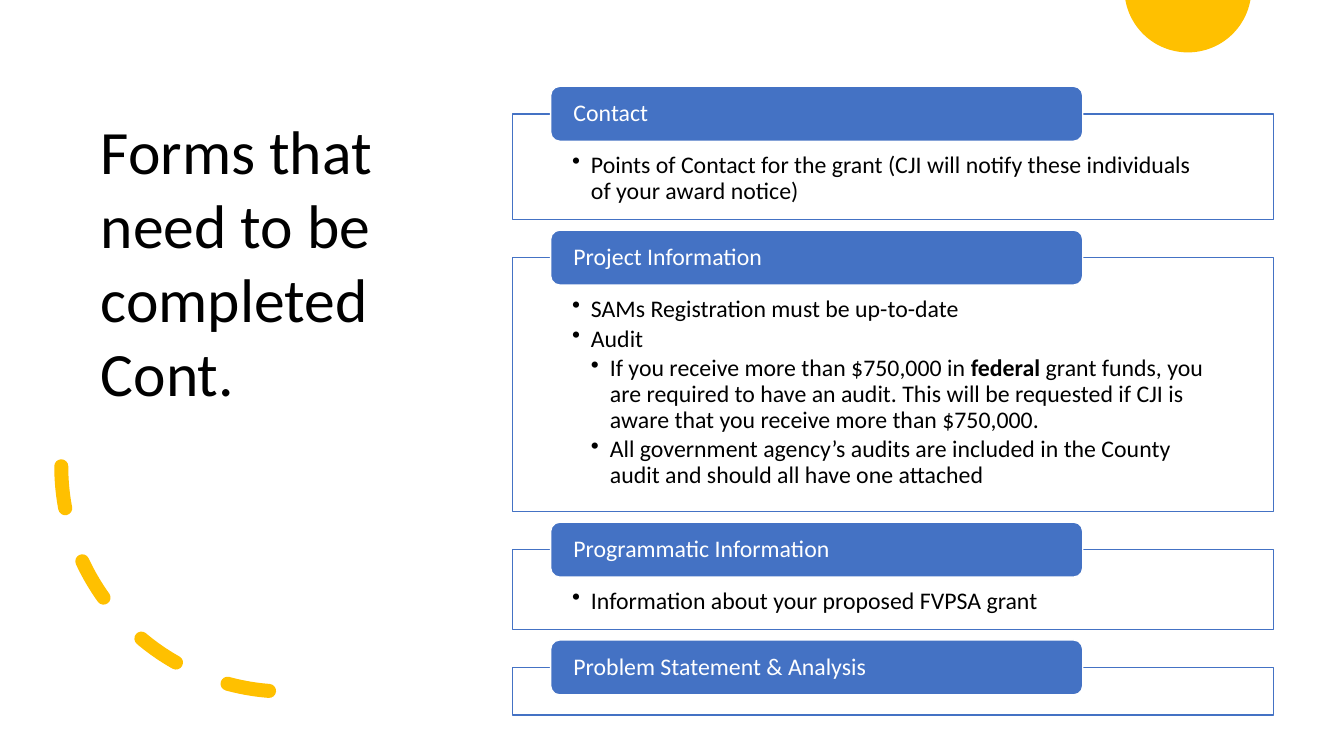
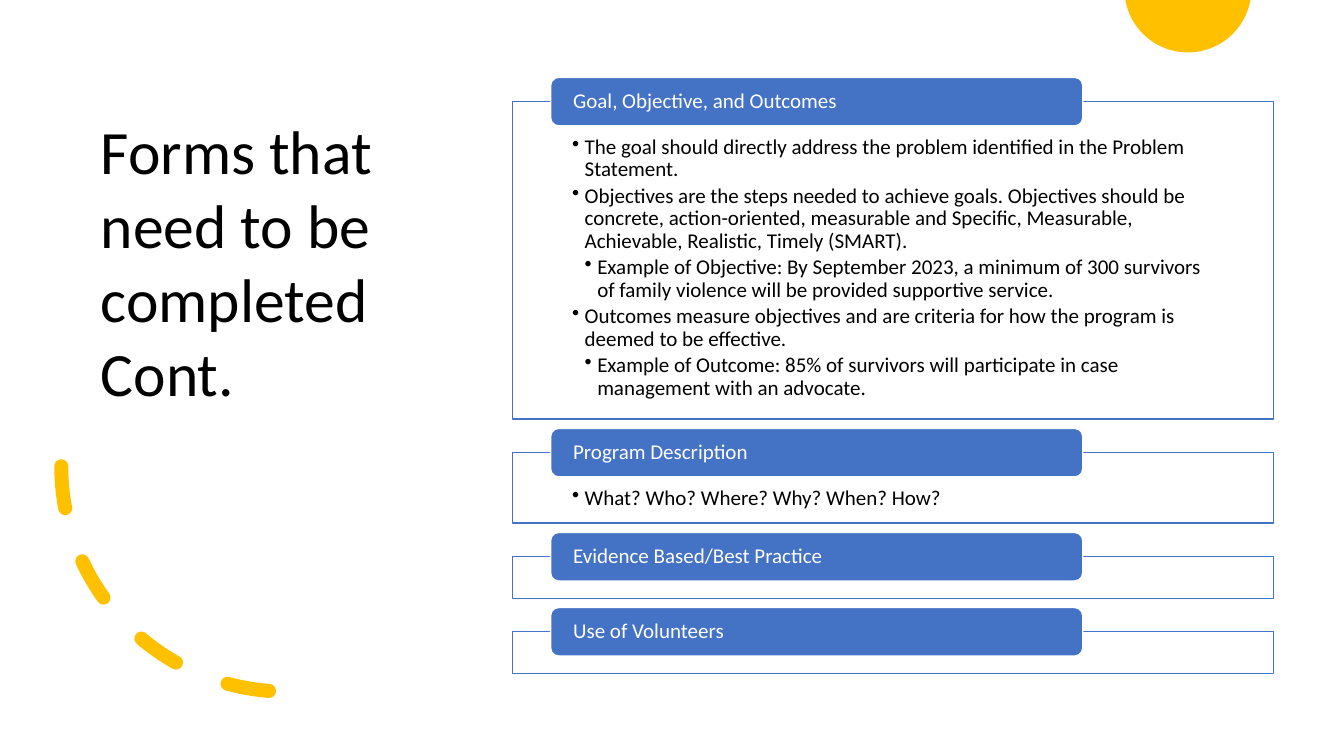
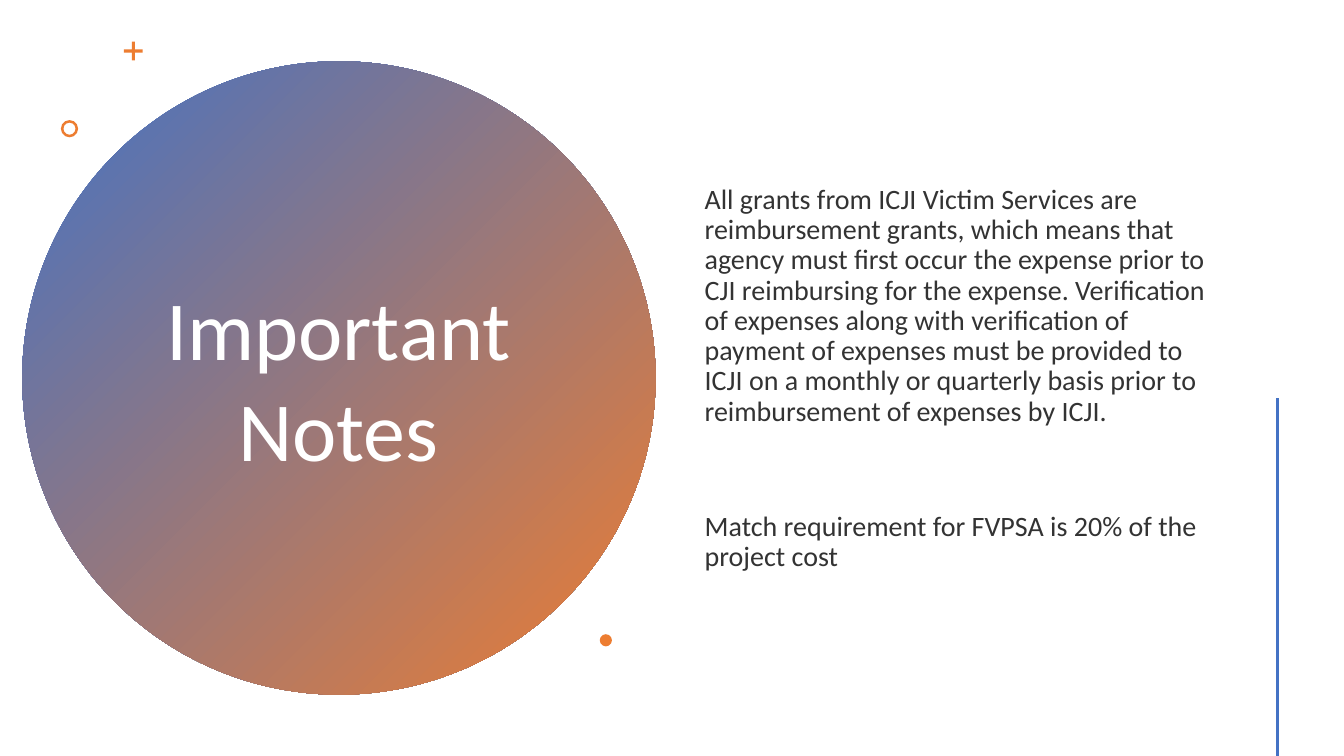
import math
from dataclasses import dataclass

import pptx
import pptx.dml.color
import pptx.enum.dml
import pptx.enum.shapes
import pptx.enum.text
import pptx.oxml.ns
import pptx.util
from lxml import etree

COLUMNS, ROWS = 160, 90
CELL = pptx.util.Inches(1) / 12

SHAPE = pptx.enum.shapes.MSO_SHAPE
ANCHOR = pptx.enum.text.MSO_ANCHOR
ALIGN = pptx.enum.text.PP_ALIGN
qn = pptx.oxml.ns.qn


@dataclass(frozen=True)
class Theme:
    font: str = "Calibri"
    blue: str = "4472C4"
    gold: str = "FFC000"
    orange: str = "ED7D31"
    white: str = "FFFFFF"
    black: str = "000000"
    ink: str = "333333"
    title_size: int = 44
    hero_size: int = 60
    body_size: int = 20
    tight: float = 0.9


@dataclass(frozen=True)
class Area:
    left: float
    top: float
    width: float
    height: float

    def emu(self) -> list[int]:
        return [grid(n) for n in (self.left, self.top, self.width, self.height)]


@dataclass(frozen=True)
class Span:
    text: str
    bold: bool = False


@dataclass(frozen=True)
class Bullet:
    spans: tuple[Span, ...]
    level: int = 1


@dataclass(frozen=True)
class Section:
    heading: str
    height: float
    bullets: tuple[Bullet, ...] = ()


@dataclass(frozen=True)
class Stack:
    top: float
    label_height: float
    size: int
    indent: float
    sections: tuple[Section, ...]


THEME = Theme()


def grid(cells: float) -> int:
    return round(cells * CELL)


def rgb(value: str) -> pptx.dml.color.RGBColor:
    return pptx.dml.color.RGBColor.from_string(value)


def point(text: str, level: int = 1) -> Bullet:
    return Bullet((Span(text),), level)


def add_run(paragraph, text: str, size: int, color: str, bold: bool = False) -> None:
    run = paragraph.add_run()
    run.text = text
    run.font.name = THEME.font
    run.font.size = pptx.util.Pt(size)
    run.font.bold = bold
    run.font.color.rgb = rgb(color)


def paint(shape, fill: str | None = None, line: str | None = None, width: float = 1):
    shape.shadow.inherit = False
    if fill:
        shape.fill.solid()
        shape.fill.fore_color.rgb = rgb(fill)
    else:
        shape.fill.background()
    if line:
        shape.line.color.rgb = rgb(line)
        shape.line.width = pptx.util.Pt(width)
    else:
        shape.line.fill.background()
    return shape


def add_preset(slide, preset, area: Area):
    return slide.shapes.add_shape(preset, *area.emu())


def set_frame(frame, anchor, insets: tuple[float, float, float, float]) -> None:
    frame.word_wrap = True
    frame.vertical_anchor = anchor
    frame.margin_left, frame.margin_top, frame.margin_right, frame.margin_bottom = map(grid, insets)


def add_titled_slide(deck):
    return deck.slides.add_slide(deck.slide_layouts.get_by_name("Title Only"))


def set_title(slide, text: str, area: Area, size: int, color: str, align) -> None:
    title = slide.shapes.title
    title.left, title.top, title.width, title.height = area.emu()
    frame = title.text_frame
    frame.auto_size = pptx.enum.text.MSO_AUTO_SIZE.NONE
    set_frame(frame, ANCHOR.TOP, (1.2, 0.6, 1.2, 0.6))
    frame.paragraphs[0].alignment = align
    add_run(frame.paragraphs[0], text, size, color)
    slide.shapes.element.append(title.element)


def draw_sun(slide) -> None:
    center_x, center_y, radius, steps = 141.42, -1.32, 7.56, 60
    start = math.asin(-center_y / radius)
    sweep = math.pi - 2 * start
    angles = [start + sweep * i / steps for i in range(steps + 1)]
    rim = [(grid(center_x + radius * math.cos(a)), grid(center_y + radius * math.sin(a))) for a in angles]
    builder = slide.shapes.build_freeform(*rim[0])
    builder.add_line_segments(rim[1:], close=True)
    paint(builder.convert_to_shape(), THEME.gold)


def draw_dashed_arc(slide) -> None:
    arc = paint(add_preset(slide, SHAPE.ARC, Area(7.3, 28.7, 53.64, 53.64)), None, THEME.gold, 10)
    arc.rotation = 90
    arc.line.dash_style = pptx.enum.dml.MSO_LINE.DASH
    arc.element.spPr.find(qn("a:xfrm")).set("flipV", "1")
    arc.element.spPr.find(qn("a:ln")).set("cap", "rnd")


def add_bullet(paragraph, bullet: Bullet, stack: Stack) -> None:
    paragraph.level = bullet.level
    paragraph.alignment = ALIGN.LEFT
    paragraph.line_spacing = THEME.tight
    paragraph.space_after = pptx.util.Pt(stack.size * 0.17)
    properties = paragraph._p.get_or_add_pPr()
    properties.set("marL", str(grid(stack.indent * bullet.level)))
    properties.set("indent", str(-grid(stack.indent)))
    etree.SubElement(properties, qn("a:buChar")).set("char", "•")
    for span in bullet.spans:
        add_run(paragraph, span.text, stack.size, THEME.black, span.bold)


def draw_section(slide, section: Section, top: float, stack: Stack) -> None:
    box = paint(add_preset(slide, SHAPE.RECTANGLE, Area(61, top, 90.6, section.height)), THEME.white, THEME.blue)
    fill_color = next(box.element.iter(qn("a:srgbClr")))
    etree.SubElement(fill_color, qn("a:alpha")).set("val", "90000")
    if section.bullets:
        frame = box.text_frame
        set_frame(frame, ANCHOR.TOP, (7.1, stack.label_height * 0.71, 7.1, 1.5))
        for index, bullet in enumerate(section.bullets):
            paragraph = frame.add_paragraph() if index else frame.paragraphs[0]
            add_bullet(paragraph, bullet, stack)

    label_area = Area(65.55, top - stack.label_height / 2, 63.35, stack.label_height)
    label = paint(add_preset(slide, SHAPE.ROUNDED_RECTANGLE, label_area), THEME.blue, THEME.white)
    set_frame(label.text_frame, ANCHOR.MIDDLE, (2.4, 0, 2.4, 0))
    heading = label.text_frame.paragraphs[0]
    heading.alignment = ALIGN.LEFT
    heading.line_spacing = THEME.tight
    add_run(heading, section.heading, stack.size, THEME.white)


def build_forms_slide(deck, stack: Stack) -> None:
    slide = add_titled_slide(deck)
    draw_sun(slide)
    draw_dashed_arc(slide)
    set_title(slide, "Forms that need to be completed Cont.", Area(10.8, 12.85, 46.55, 36.7),
              THEME.title_size, THEME.black, ALIGN.LEFT)
    top = stack.top
    for section in stack.sections:
        draw_section(slide, section, top, stack)
        top += section.height + stack.label_height * 0.69


def build_notes_slide(deck, notes: tuple[str, ...]) -> None:
    slide = add_titled_slide(deck)
    disc = paint(add_preset(slide, SHAPE.OVAL, Area(2.65, 7.3, 75.4, 75.4)))
    disc.fill.gradient()
    disc.fill.gradient_angle = 315
    for stop, position, color in zip(disc.fill.gradient_stops, (0, 1), (THEME.blue, THEME.orange)):
        stop.position = position
        stop.color.rgb = rgb(color)

    plus = paint(add_preset(slide, SHAPE.CROSS, Area(14.75, 4.95, 2.25, 2.25)), THEME.orange)
    plus.adjustments[0] = 0.42
    ring = paint(add_preset(slide, SHAPE.DONUT, Area(7.25, 14.3, 2.05, 2.05)), THEME.orange)
    ring.adjustments[0] = 0.15
    paint(add_preset(slide, SHAPE.OVAL, Area(71.4, 75.5, 1.45, 1.45)), THEME.orange)

    body = slide.shapes.add_textbox(*Area(82.7, 6.85, 62.65, 76.55).emu()).text_frame
    set_frame(body, ANCHOR.MIDDLE, (1.2, 0.6, 1.2, 0.6))
    for index, note in enumerate(notes):
        paragraph = body.add_paragraph() if index else body.paragraphs[0]
        paragraph.line_spacing = THEME.tight
        paragraph.space_before = pptx.util.Pt(55 if index else 0)
        paragraph.space_after = pptx.util.Pt(6)
        add_run(paragraph, note, THEME.body_size, THEME.ink)

    rule_x = grid(152.05)
    rule = slide.shapes.add_connector(pptx.enum.shapes.MSO_CONNECTOR.STRAIGHT,
                                      rule_x, grid(47.4), rule_x, grid(ROWS))
    rule.line.color.rgb = rgb(THEME.blue)
    rule.line.width = pptx.util.Pt(2)
    etree.SubElement(rule.element.spPr, qn("a:effectLst"))

    set_title(slide, "Important Notes", Area(13.7, 32.3, 53.2, 25.45),
              THEME.hero_size, THEME.white, ALIGN.CENTER)


APPLICATION = Stack(13.55, 6.55, 17, 2.25, (
    Section("Contact", 12.6, (
        point("Points of Contact for the grant (CJI will notify these individuals of your award notice)"),
    )),
    Section("Project Information", 30.25, (
        point("SAMs Registration must be up-to-date"),
        point("Audit"),
        Bullet((
            Span("If you receive more than $750,000 in "),
            Span("federal", True),
            Span(" grant funds, you are required to have an audit. This will be requested if CJI "
                 "is aware that you receive more than $750,000."),
        ), 2),
        point("All government agency’s audits are included in the County audit and should all "
              "have one attached", 2),
    )),
    Section("Programmatic Information", 9.5, (point("Information about your proposed FVPSA grant"),)),
    Section("Problem Statement & Analysis", 5.65),
))

PROGRAM = Stack(12.1, 5.78, 15, 1.5, (
    Section("Goal, Objective, and Outcomes", 37.8, (
        point("The goal should directly address the problem identified in the Problem Statement."),
        point("Objectives are the steps needed to achieve goals. Objectives should be concrete, "
              "action-oriented, measurable and Specific, Measurable, Achievable, Realistic, Timely (SMART)."),
        point("Example of Objective: By September 2023, a minimum of 300 survivors of family "
              "violence will be provided supportive service.", 2),
        point("Outcomes measure objectives and are criteria for how the program is deemed to be effective."),
        point("Example of Outcome: 85% of survivors will participate in case management with an advocate.", 2),
    )),
    Section("Program Description", 8.4, (point("What? Who? Where? Why? When? How?"),)),
    Section("Evidence Based/Best Practice", 4.95),
    Section("Use of Volunteers", 4.95),
))

NOTES = (
    "All grants from ICJI Victim Services are reimbursement grants, which means that agency must "
    "first occur the expense prior to CJI reimbursing for the expense. Verification of expenses "
    "along with verification of payment of expenses must be provided to ICJI on a monthly or "
    "quarterly basis prior to reimbursement of expenses by ICJI.",
    "Match requirement for FVPSA is 20% of the project cost",
)


def main() -> None:
    deck = pptx.Presentation()
    deck.slide_width, deck.slide_height = grid(COLUMNS), grid(ROWS)
    for stack in (APPLICATION, PROGRAM):
        build_forms_slide(deck, stack)
    build_notes_slide(deck, NOTES)
    deck.save("out.pptx")


if __name__ == "__main__":
    main()
